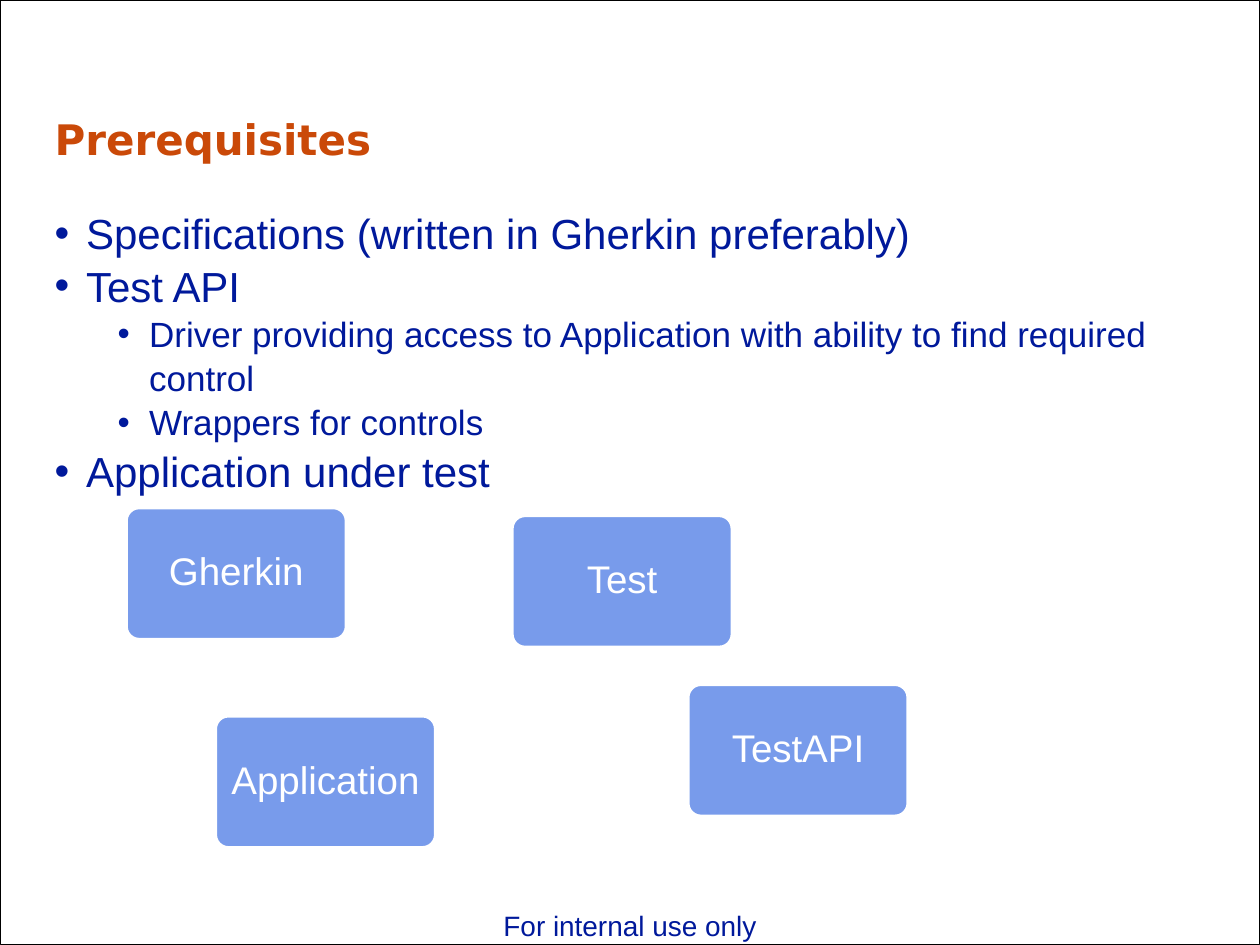
import pptx
import pptx.dml.color
import pptx.enum.shapes
import pptx.enum.text
import pptx.oxml.ns
import pptx.util
from lxml import etree

Pt = pptx.util.Pt
ALIGN = pptx.enum.text.PP_ALIGN
ANCHOR = pptx.enum.text.MSO_ANCHOR
SHAPES = pptx.enum.shapes.MSO_SHAPE

PREREQUISITES = [
    (0, "Specifications (written in Gherkin preferably)"),
    (0, "Test API"),
    (1, "Driver providing access to Application with ability to find required control"),
    (1, "Wrappers for controls"),
    (0, "Application under test"),
]
COMPONENTS = [
    ("Gherkin", 72, 290),
    ("Test", 292.5, 294.5),
    ("TestAPI", 393, 391),
    ("Application", 123, 409),
]


def color(hex_string):
    return pptx.dml.color.RGBColor.from_string(hex_string)


def write(paragraph, text, *, size, fill, font="Arial", bold=False,
          align=ALIGN.LEFT, spacing=1.0):
    paragraph.text = text
    paragraph.alignment = align
    paragraph.line_spacing = spacing
    paragraph.space_before = paragraph.space_after = Pt(0)
    paragraph.font.name = font
    paragraph.font.size = Pt(size)
    paragraph.font.bold = bold
    paragraph.font.color.rgb = color(fill)


def add_bullet(paragraph, indent, hanging):
    properties = paragraph._p.get_or_add_pPr()
    properties.set("marL", str(Pt(indent)))
    properties.set("indent", str(-Pt(hanging)))
    bullet = etree.SubElement(properties, pptx.oxml.ns.qn("a:buChar"))
    bullet.set("char", "•")


def place(shape, left, top, width, height):
    shape.left, shape.top = Pt(left), Pt(top)
    shape.width, shape.height = Pt(width), Pt(height)


def prepare_frame(shape, anchor=ANCHOR.TOP):
    frame = shape.text_frame
    frame.word_wrap = True
    frame.auto_size = pptx.enum.text.MSO_AUTO_SIZE.NONE
    frame.vertical_anchor = anchor
    return frame


class SlideBuilder:
    navy = "00199B"
    orange = "CA4908"
    box_blue = "789BEB"
    white = "FFFFFF"
    black = "000000"

    def __init__(self, presentation):
        self.slide = presentation.slides.add_slide(presentation.slide_layouts[1])

    def border(self, width, height):
        shape = self.slide.shapes.add_shape(
            SHAPES.RECTANGLE, 0, 0, Pt(width), Pt(height))
        shape.shadow.inherit = False
        shape.fill.background()
        shape.line.color.rgb = color(self.black)
        shape.line.width = Pt(0.5)

    def title(self, text, *bounds):
        shape = self.slide.shapes.title
        place(shape, *bounds)
        write(prepare_frame(shape).paragraphs[0], text, size=24,
              fill=self.orange, font="DejaVu Sans", bold=True)

    def bullets(self, items, *bounds):
        shape = self.slide.placeholders[1]
        place(shape, *bounds)
        frame = prepare_frame(shape)
        for index, (level, text) in enumerate(items):
            paragraph = frame.add_paragraph() if index else frame.paragraphs[0]
            paragraph.level = level
            paragraph.line_spacing = 1.05
            paragraph.space_before = paragraph.space_after = Pt(0)
            add_bullet(paragraph, indent=18 + 36 * level, hanging=18)
            write(paragraph, text, size=24 - 4 * level, fill=self.navy, spacing=1.05)

    def footer(self, text, *bounds):
        shape = self.slide.shapes.add_textbox(*map(Pt, bounds))
        write(prepare_frame(shape).paragraphs[0], text, size=16,
              fill=self.navy, align=ALIGN.CENTER)

    def component(self, text, left, top, width=126, height=75.5):
        shape = self.slide.shapes.add_shape(
            SHAPES.ROUNDED_RECTANGLE, *map(Pt, (left, top, width, height)))
        shape.adjustments[0] = 0.1
        shape.shadow.inherit = False
        shape.fill.solid()
        shape.fill.fore_color.rgb = color(self.box_blue)
        shape.line.color.rgb = color(self.white)
        shape.line.width = Pt(2)
        frame = prepare_frame(shape, ANCHOR.MIDDLE)
        frame.margin_left = frame.margin_right = Pt(6)
        write(frame.paragraphs[0], text, size=22, fill=self.white,
              align=ALIGN.CENTER, spacing=0.9)


def main():
    presentation = pptx.Presentation()
    presentation.slide_width, presentation.slide_height = Pt(720), Pt(540)
    builder = SlideBuilder(presentation)
    builder.border(720, 540)
    builder.footer("For internal use only", 0, 515.5, 720, 24.5)
    builder.title("Prerequisites", 24, 61, 621, 36)
    builder.bullets(PREREQUISITES, 24, 113.5, 663, 167)
    for name, left, top in COMPONENTS:
        builder.component(name, left, top)
    presentation.save("out.pptx")


if __name__ == "__main__":
    main()
